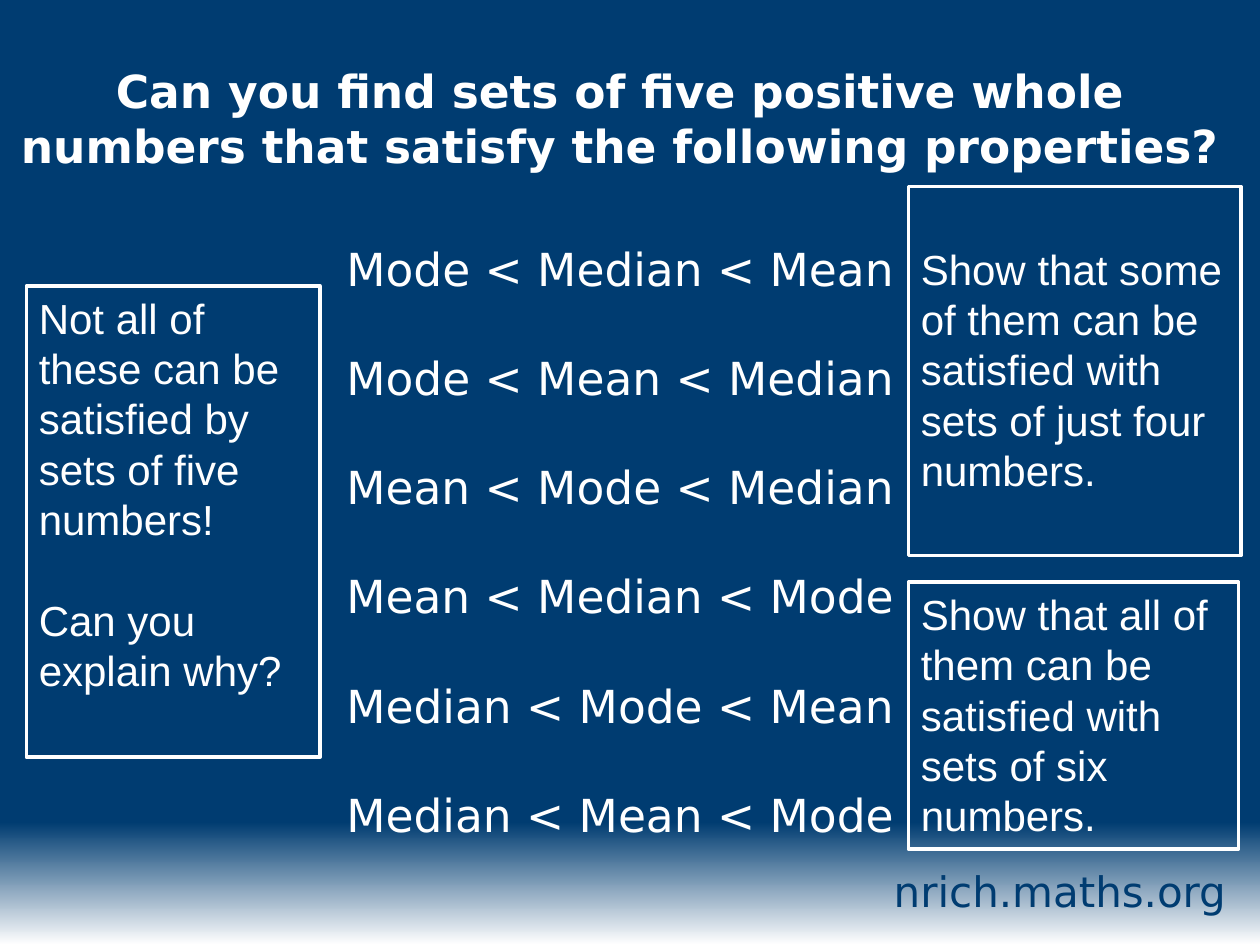
from dataclasses import dataclass

import pptx
import pptx.dml.color
import pptx.enum.text
import pptx.util

COLUMNS, ROWS = 100, 75
COLOURS = {"navy": "003C71", "white": "FFFFFF"}
LINE_HEIGHT = 1.2
ALIGN = pptx.enum.text.PP_ALIGN
ANCHOR = pptx.enum.text.MSO_ANCHOR


@dataclass(frozen=True)
class Line:
    text: str
    gap: float = 0
    bold: bool = False


@dataclass(frozen=True)
class Panel:
    column: float
    row: float
    columns: float
    rows: float
    lines: tuple[Line, ...]
    font: str = "Arial"
    size: int = 24
    colour: str = "white"
    align: ALIGN = ALIGN.LEFT
    anchor: ANCHOR = ANCHOR.TOP
    inset_rows: float = 0.5
    framed: bool = False


QUESTION = "Can you find sets of five positive whole numbers that satisfy the following properties?"
ORDERINGS = (
    ("Mode", "Median", "Mean"),
    ("Mode", "Mean", "Median"),
    ("Mean", "Mode", "Median"),
    ("Mean", "Median", "Mode"),
    ("Median", "Mode", "Mean"),
    ("Median", "Mean", "Mode"),
)

PANELS = (
    Panel(0.2, 4.5, 98.1, 60.5,
          (Line(QUESTION, bold=True),
           *(Line(" < ".join(ordering), gap=31.2 if index else 39.2)
             for index, ordering in enumerate(ORDERINGS))),
          font="DejaVu Sans", size=26, align=ALIGN.CENTER),
    Panel(61, 68.2, 37.3, 5, (Line("nrich.maths.org"),),
          font="DejaVu Sans", colour="navy", align=ALIGN.RIGHT, anchor=ANCHOR.MIDDLE),
    Panel(2.1, 22.7, 23.3, 37.4,
          (Line("Not all of these can be satisfied by sets of five numbers!"),
           Line("Can you explain why?", gap=28.8)), framed=True),
    Panel(72.1, 14.8, 26.4, 29.3,
          (Line("Show that some of them can be satisfied with sets of just four numbers."),),
          inset_rows=4.5, framed=True),
    Panel(72.1, 46.2, 26.2, 21.2,
          (Line("Show that all of them can be satisfied with sets of six numbers."),),
          framed=True),
)


def rgb(name: str) -> pptx.dml.color.RGBColor:
    return pptx.dml.color.RGBColor.from_string(COLOURS[name])


def grid(cells: float) -> pptx.util.Emu:
    return pptx.util.Inches(cells / 10)


def paint_background(slide: pptx.slide.Slide) -> None:
    fade = slide.background.fill
    fade.gradient()
    fade.gradient_angle = 270
    for stop, position, colour in zip(fade.gradient_stops, (0.87, 1), ("navy", "white")):
        stop.position = position
        stop.color.rgb = rgb(colour)


def draw_panel(slide: pptx.slide.Slide, panel: Panel) -> None:
    box = slide.shapes.add_textbox(
        *map(grid, (panel.column, panel.row, panel.columns, panel.rows)))
    if panel.framed:
        box.line.color.rgb = rgb("white")
        box.line.width = pptx.util.Pt(2)
    frame = box.text_frame
    frame.word_wrap = True
    frame.vertical_anchor = panel.anchor
    frame.margin_top = grid(panel.inset_rows)
    frame.text = "\n".join(line.text for line in panel.lines)
    for paragraph, line in zip(frame.paragraphs, panel.lines):
        paragraph.alignment = panel.align
        paragraph.line_spacing = pptx.util.Pt(panel.size * LINE_HEIGHT)
        if line.gap:
            paragraph.space_before = pptx.util.Pt(line.gap)
        for run in paragraph.runs:
            run.font.name = panel.font
            run.font.size = pptx.util.Pt(panel.size)
            run.font.bold = line.bold
            run.font.color.rgb = rgb(panel.colour)


def main() -> None:
    deck = pptx.Presentation()
    deck.slide_width, deck.slide_height = grid(COLUMNS), grid(ROWS)
    slide = deck.slides.add_slide(deck.slide_layouts[6])
    paint_background(slide)
    for panel in PANELS:
        draw_panel(slide, panel)
    deck.save("out.pptx")


if __name__ == "__main__":
    main()
